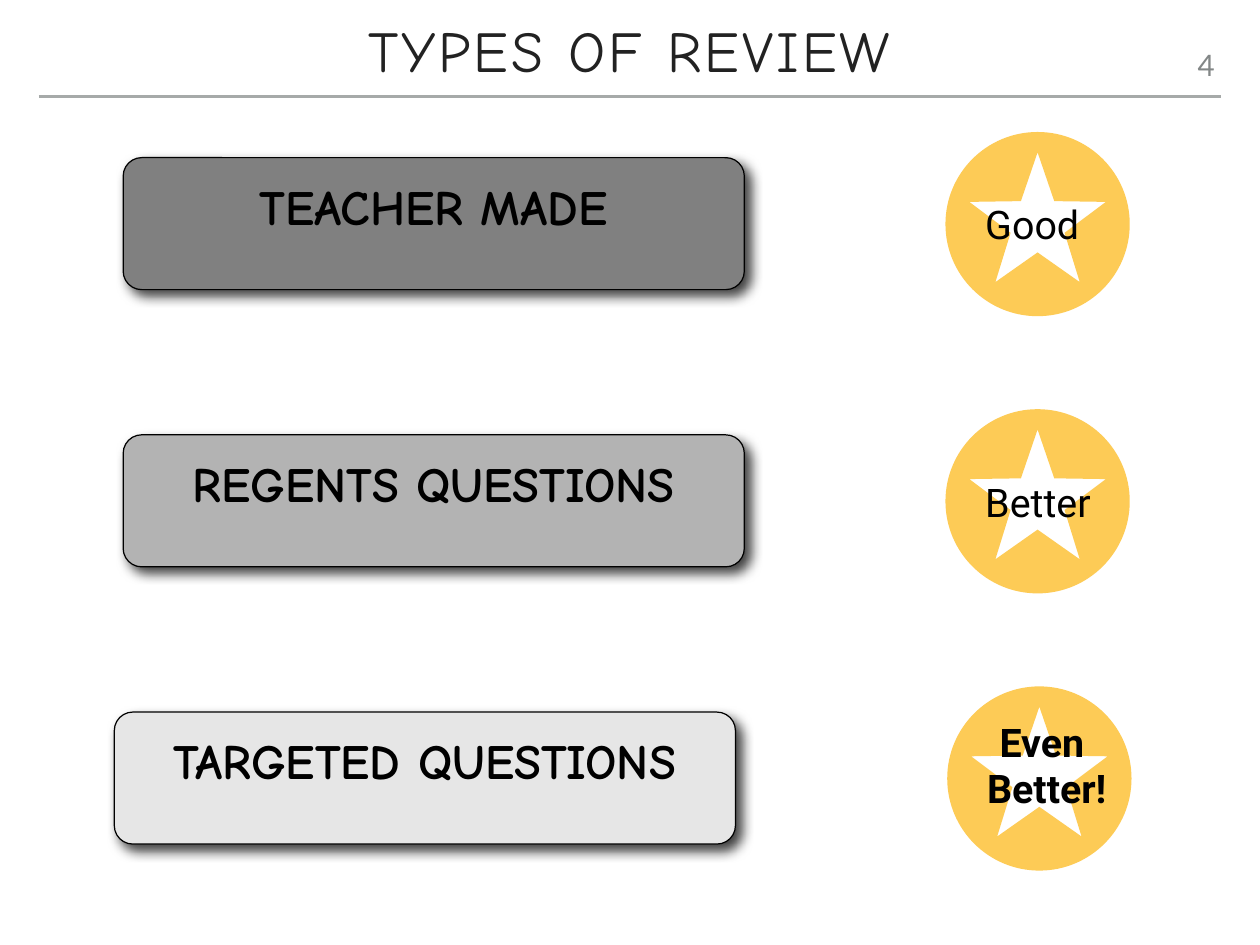
from dataclasses import dataclass
from math import cos, pi, sin

from lxml.etree import SubElement
from pptx import Presentation
from pptx.dml.color import RGBColor
from pptx.enum.shapes import MSO_CONNECTOR, MSO_SHAPE
from pptx.enum.text import MSO_ANCHOR as Anchor, MSO_AUTO_SIZE as AutoSize, PP_ALIGN as Align
from pptx.oxml.ns import qn
from pptx.util import Inches, Pt

# Content
TITLE = "TYPES OF REVIEW"
PAGE_NUMBER = "4"
# label, fill, label left
LABELS = [
    ("TEACHER MADE", "808080", 1.39),
    ("REGENTS QUESTIONS", "B3B3B3", 1.39),
    ("TARGETED QUESTIONS", "E6E6E6", 1.29),
]
# rating lines, badge left, rating box (left, offset from badge top, width, height)
BADGES = [
    (["Good"], 10.67, (11.06, 0.68, 1.3, 0.72)),
    (["Better"], 10.67, (11.06, 0.69, 1.37, 0.72)),
    (["Even ", "Better!"], 10.69, (11.01, 0.38, 1.61, 1.15)),
]


@dataclass(frozen=True)
class Theme:
    title_color: str = "222222"
    text: str = "000000"
    rule: str = "A6AAA9"
    number: str = "838787"
    badge: str = "FDCB56"
    display_font: str = "Comic Neue"
    rating_font: str = "Roboto"
    number_font: str = "Lato"
    title_size: int = 47
    label_size: int = 40
    rating_size: int = 32
    number_size: int = 24


THEME = Theme()

# Layout, in inches
WIDTH, HEIGHT = 14.22, 10.67
MARGIN, INSET = 0.44, 0.06
ROW_PITCH = 3.13
LABEL_TOP, LABEL_WIDTH, LABEL_HEIGHT = 1.78, 7.01, 1.49
BADGE_TOP, BADGE_RADIUS = 1.49, 1.04
STAR_RADIUS, STAR_INNER_RADIUS = 0.81, 0.32
CURVE_HANDLE = BADGE_RADIUS * 4 * (2 ** 0.5 - 1) / 3


def color(value):
    return RGBColor.from_string(value)


def write(shape, lines, font, size, text_color, align, anchor=Anchor.MIDDLE,
          bold=False, spacing=None, wrap=True):
    frame = shape.text_frame
    frame.text = "\n".join(lines)
    frame.word_wrap = wrap
    frame.auto_size = AutoSize.NONE
    frame.vertical_anchor = anchor
    frame.margin_left = frame.margin_right = Inches(INSET)
    frame.margin_top = frame.margin_bottom = Inches(INSET)
    for paragraph in frame.paragraphs:
        paragraph.alignment = align
        paragraph.space_before = Pt(0)
        if spacing:
            paragraph.line_spacing = spacing
        for run in paragraph.runs:
            run.font.name = font
            run.font.size = Pt(size)
            run.font.bold = bold
            run.font.color.rgb = color(text_color)
    return frame


def add_text_box(shapes, left, top, width, height):
    return shapes.add_textbox(Inches(left), Inches(top), Inches(width), Inches(height))


def add_drop_shadow(shape):
    shape.shadow.inherit = False
    effects = shape._element.spPr.find(qn("a:effectLst"))
    shadow = SubElement(effects, qn("a:outerShdw"), blurRad=str(Pt(10)), dist=str(Pt(6)),
                        dir=str(45 * 60000), algn="tl", rotWithShape="0")
    shade = SubElement(shadow, qn("a:srgbClr"), val=THEME.text)
    SubElement(shade, qn("a:alpha"), val="75000")


def circle_points(center_x, center_y):
    """Start point, then two handles and an end point for each quarter."""
    radius, handle = BADGE_RADIUS, CURVE_HANDLE
    offsets = [(0, -radius)]
    for quarter in range(4):
        x, y = offsets[-1]
        next_x, next_y = y, -x
        ratio = handle / radius
        offsets += [(x + next_x * ratio, y + next_y * ratio),
                    (next_x + x * ratio, next_y + y * ratio), (next_x, next_y)]
    return [(Inches(center_x + x), Inches(center_y + y)) for x, y in offsets]


def star_points(center_x, center_y):
    points = []
    for step in range(10):
        radius = STAR_INNER_RADIUS if step % 2 else STAR_RADIUS
        angle = pi * step / 5 - pi / 2
        points.append((Inches(center_x + radius * cos(angle)),
                       Inches(center_y + radius * sin(angle))))
    return points


def curve_quarters(freeform):
    """Join each three of the circle's twelve segments into one Bezier curve."""
    segments = list(freeform._element.iter(qn("a:lnTo")))[:12]
    for first, second, third in zip(segments[::3], segments[1::3], segments[2::3]):
        outline = first.getparent()
        curve = SubElement(outline, qn("a:cubicBezTo"))
        outline.replace(first, curve)
        for segment in (first, second, third):
            curve.append(segment[0])
        outline.remove(second)
        outline.remove(third)


def add_label(shapes, label, fill, left, top):
    box = shapes.add_shape(MSO_SHAPE.ROUNDED_RECTANGLE, Inches(left), Inches(top),
                           Inches(LABEL_WIDTH), Inches(LABEL_HEIGHT))
    box.adjustments[0] = 0.14
    box.fill.solid()
    box.fill.fore_color.rgb = color(fill)
    box.line.color.rgb = color(THEME.text)
    box.line.width = Pt(1)
    add_drop_shadow(box)
    write(box, [label], THEME.display_font, THEME.label_size, THEME.text,
          Align.CENTER, bold=True, spacing=0.1)


def add_badge(shapes, rating, badge_left, rating_box, top):
    group = shapes.add_group_shape()
    center = badge_left + BADGE_RADIUS, top + BADGE_RADIUS
    circle, star = circle_points(*center), star_points(*center)
    builder = group.shapes.build_freeform(*circle[0])
    builder.add_line_segments(circle[1:], close=True)
    builder.move_to(*star[0])
    builder.add_line_segments(star[1:], close=True)
    badge = builder.convert_to_shape()
    curve_quarters(badge)
    badge.shadow.inherit = False
    badge.fill.solid()
    badge.fill.fore_color.rgb = color(THEME.badge)
    badge.line.fill.background()

    left, offset, width, height = rating_box
    stacked = len(rating) > 1
    text_box = add_text_box(group.shapes, left, top + offset, width, height)
    frame = write(text_box, rating, THEME.rating_font, THEME.rating_size, THEME.text,
                  Align.CENTER if stacked else Align.LEFT, bold=stacked, wrap=False)
    if stacked:
        frame.paragraphs[0].line_spacing = 0.7


def main():
    presentation = Presentation()
    presentation.slide_width, presentation.slide_height = Inches(WIDTH), Inches(HEIGHT)
    slide = presentation.slides.add_slide(presentation.slide_layouts[5])
    shapes = slide.shapes

    # Title and rule
    title = shapes.title
    title.left, title.top = Inches(MARGIN), Inches(0.06)
    title.width, title.height = Inches(13.33), Inches(0.94)
    frame = write(title, [TITLE], THEME.display_font, THEME.title_size, THEME.title_color,
                  Align.CENTER, anchor=Anchor.BOTTOM, spacing=0.8)
    frame.paragraphs[0].runs[0].font._element.set("spc", "240")
    rule = shapes.add_connector(MSO_CONNECTOR.STRAIGHT, Inches(MARGIN), Inches(1.09),
                                Inches(WIDTH - MARGIN), Inches(1.09))
    rule.line.color.rgb = color(THEME.rule)
    rule.line.width = Pt(2)
    SubElement(rule._element.spPr, qn("a:effectLst"))

    # Review labels and their ratings
    for row, label in enumerate(LABELS):
        add_label(shapes, *label, LABEL_TOP + row * ROW_PITCH)
    for row, badge in enumerate(BADGES):
        add_badge(shapes, *badge, BADGE_TOP + row * ROW_PITCH)

    # Page number
    number = add_text_box(shapes, 13.49, 0.47, 0.28, 0.5)
    write(number, [PAGE_NUMBER], THEME.number_font, THEME.number_size, THEME.number,
          Align.RIGHT, anchor=Anchor.TOP, wrap=False)

    presentation.save("out.pptx")


if __name__ == "__main__":
    main()
